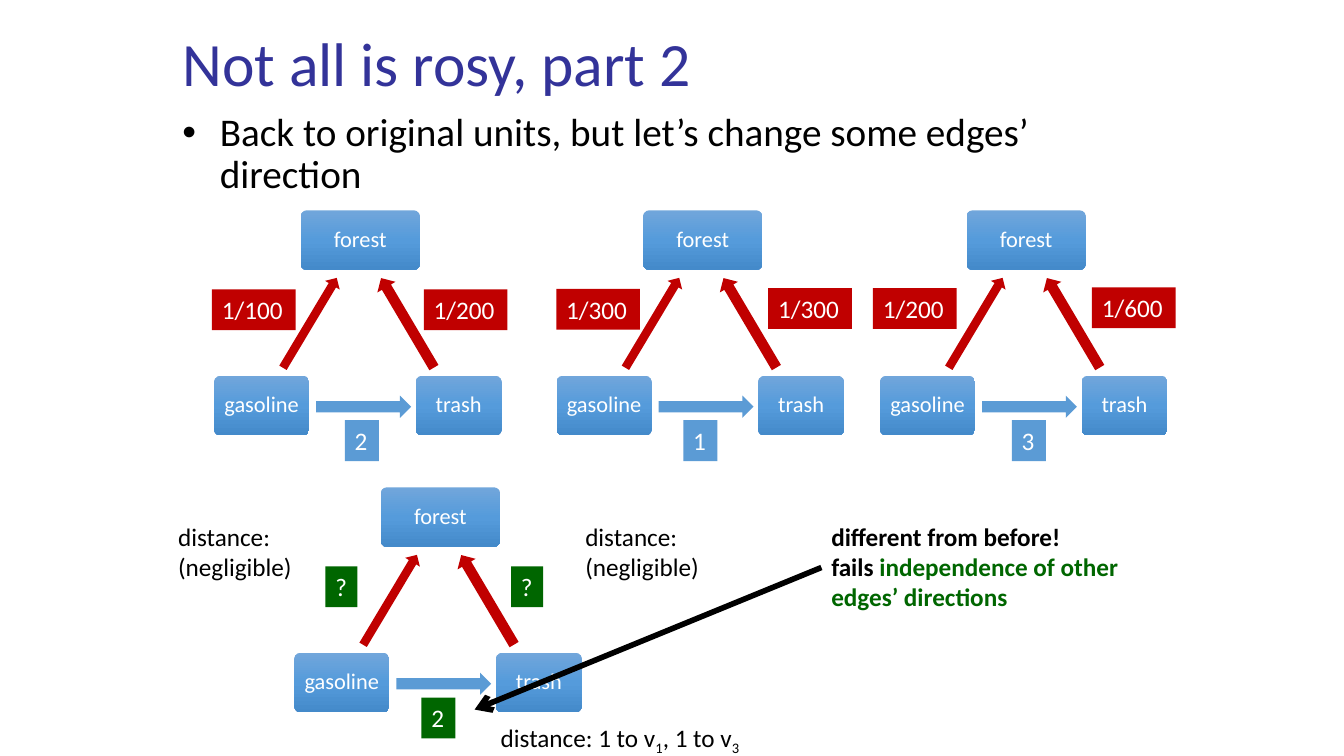
from copy import deepcopy
from lxml.etree import SubElement
from pptx import Presentation
from pptx.dml.color import RGBColor
from pptx.enum.shapes import MSO_CONNECTOR, MSO_SHAPE
from pptx.enum.text import MSO_ANCHOR, MSO_AUTO_SIZE, PP_ALIGN
from pptx.oxml.ns import qn
from pptx.util import Cm, Pt

HUES = {
    "title": "333399", "ink": "000000", "paper": "FFFFFF", "red": "C00000",
    "blue": "5B9BD5", "green": "006600",
    "top": "71A6DB", "mid": "559BDB", "low": "448ACA",
}


def hue(name):
    return RGBColor.from_string(HUES[name])


def write(frame, lines, size=18, color="ink", bold=False, align=PP_ALIGN.LEFT,
          space=None, inset=None, anchor=MSO_ANCHOR.TOP, wrap=True, bullet=None):
    frame.word_wrap = wrap
    frame.vertical_anchor = anchor
    if inset is not None:
        frame.margin_left = frame.margin_right = Cm(inset)
        frame.margin_top = frame.margin_bottom = Cm(inset)
    for i, line in enumerate(lines):
        para = frame.add_paragraph() if i else frame.paragraphs[0]
        para.alignment = align
        para.line_spacing = space
        if bullet:
            props = para._element.get_or_add_pPr()
            props.set("marL", str(Cm(bullet)))
            props.set("indent", str(-Cm(bullet)))
            SubElement(props, qn("a:buFont"), typeface="Arial")
            SubElement(props, qn("a:buChar"), char="•")
        for part in [line] if isinstance(line, str) else line:
            words, extra = (part, {}) if isinstance(part, str) else part
            run = para.add_run()
            run.text = words
            font = run.font
            font.name, font.size, font.bold = "Calibri", Pt(size), bold
            font.color.rgb = hue(extra.get("color", color))
            if "base" in extra:
                font._element.set("baseline", extra["base"])


class Board:
    def __init__(self, slide):
        self.slide = slide
        self.shapes = slide.shapes

    def title(self, words, x, y, w, h):
        head = self.shapes.title
        head.left, head.top, head.width, head.height = map(Cm, (x, y, w, h))
        head.text_frame.auto_size = MSO_AUTO_SIZE.NONE
        write(head.text_frame, [words], size=44, color="title", space=0.9,
              inset=0, anchor=MSO_ANCHOR.MIDDLE)

    def text(self, lines, x, y, w, h, **style):
        box = self.shapes.add_textbox(*map(Cm, (x, y, w, h)))
        write(box.text_frame, lines, **style)

    def shape(self, kind, x, y, w, h, color=None):
        form = self.shapes.add_shape(kind, *map(Cm, (x, y, w, h)))
        form.shadow.inherit = False
        form.line.fill.background()
        if color:
            form.fill.solid()
            form.fill.fore_color.rgb = hue(color)
        return form

    def node(self, word, x, y, w):
        form = self.shape(MSO_SHAPE.ROUNDED_RECTANGLE, x, y, w, 1.5)
        form.adjustments[0] = 0.1
        form.fill.gradient()
        form.fill.gradient_angle = 270
        first = form._element.xpath("./p:spPr//a:gs")[0]
        first.addnext(deepcopy(first))
        blend = ((0, "top"), (0.5, "mid"), (1, "low"))
        for stop, (place, name) in zip(form.fill.gradient_stops, blend):
            stop.position = place
            stop.color.rgb = hue(name)
        write(form.text_frame, [word], size=16, color="paper", space=0.9,
              align=PP_ALIGN.CENTER, inset=0.1, anchor=MSO_ANCHOR.MIDDLE,
              wrap=False)

    def arrow(self, x, y, w, h, color, turn=0):
        form = self.shape(MSO_SHAPE.RIGHT_ARROW, x, y, w, h, color)
        form.rotation = turn

    def tag(self, word, x, y, w, color):
        form = self.shape(MSO_SHAPE.RECTANGLE, x, y, w, 1.03, color)
        write(form.text_frame, [word], color="paper", wrap=False)
        form.text_frame.auto_size = MSO_AUTO_SIZE.SHAPE_TO_FIT_TEXT

    def graph(self, x, y):
        self.node("forest", x + 2.18, y, 3)
        self.arrow(x + 3.56, y + 2.57, 2.62, 0.53, "red", 239.4)
        self.node("trash", x + 5.08, y + 4.17, 2.16)
        self.arrow(x + 2.57, y + 4.67, 2.39, 0.56, "blue")
        self.node("gasoline", x, y + 4.17, 2.39)
        self.arrow(x + 1.09, y + 2.62, 2.64, 0.43, "red", 300.9)

    def link(self, x1, y1, x2, y2):
        line = self.shapes.add_connector(
            MSO_CONNECTOR.STRAIGHT, *map(Cm, (x1, y1, x2, y2)))
        line.line.color.rgb = hue("ink")
        line.line.width = Pt(4)
        props = line._element.spPr
        SubElement(props.find(qn("a:ln")), qn("a:tailEnd"), type="arrow")
        SubElement(props, qn("a:effectLst"))


def main():
    deck = Presentation()
    deck.slide_width, deck.slide_height = Cm(33.87), Cm(19.05)
    board = Board(deck.slides.add_slide(deck.slide_layouts[5]))
    board.title("Not all is rosy, part 2", 4.6, 0.43, 25.4, 2.51)
    board.text(["Back to original units, but let’s change some edges’ direction"],
               4.6, 2.84, 24.41, 13.77, size=28, space=0.9, inset=0, bullet=0.94)

    for x, y in ((5.4, 5.3), (14.03, 5.3), (22.18, 5.3), (7.42, 12.28)):
        board.graph(x, y)

    rates = (("1/100", 5.34, 7.29), ("1/200", 10.68, 7.29),
             ("1/300", 14.02, 7.28), ("1/300", 19.36, 7.26),
             ("1/200", 22, 7.26), ("1/600", 27.52, 7.24))
    for word, x, y in rates:
        board.tag(word, x, y, 2.11, "red")
    for word, x in (("2", 8.69), ("1", 17.22), ("3", 25.5)):
        board.tag(word, x, 10.59, 0.86, "blue")
    for word, x, y, w in (("?", 8.2, 14.27, 0.81), ("?", 12.88, 14.27, 0.81),
                          ("2", 10.62, 17.58, 0.86)):
        board.tag(word, x, y, w, "green")

    for x in (4.24, 14.5):
        board.text(["distance:", "(negligible)"], x, 13, 3.95, 1.8)
    low = {"base": "-25000"}
    board.text([["distance: 1 to v", ("1", low), ", 1 to v", ("3", low)]],
               12.37, 18.08, 13.56, 1.55)
    board.text(["different from before!",
                ["fails ", ("independence of other edges’ directions",
                            {"color": "green"})]],
               20.7, 13, 8.31, 2.57, bold=True)
    board.link(20.7, 14.3, 11.96, 17.88)
    deck.save("out.pptx")


if __name__ == "__main__":
    main()
